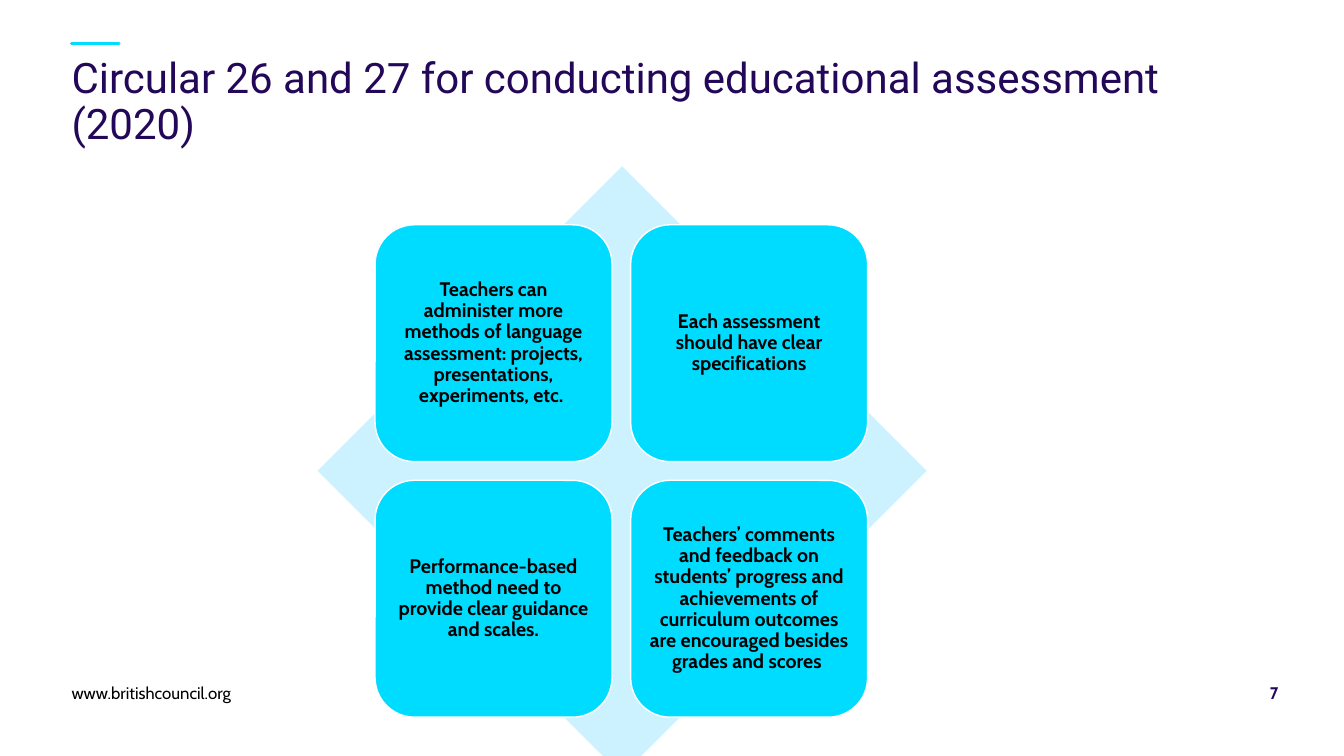
from dataclasses import dataclass

from lxml.etree import SubElement
from pptx import Presentation
from pptx.dml.color import RGBColor
from pptx.enum.shapes import MSO_CONNECTOR, MSO_SHAPE
from pptx.enum.text import MSO_ANCHOR, PP_ALIGN
from pptx.oxml.ns import qn
from pptx.shapes.autoshape import Shape
from pptx.slide import Slide
from pptx.util import Inches, Pt

CYAN, PALE_CYAN, INDIGO = "00DCFF", "CCF2FF", "230859"
WHITE, BLACK = "FFFFFF", "000000"
MARGIN = 0.71
DIAMOND_LEFT, DIAMOND_TOP, DIAMOND_SIZE = 3.15, 1.65, 6.04
CARD_LEFT, CARD_TOP, CARD_SIZE, CARD_STEP = 3.72, 2.23, 2.35, 2.535

CARD_TEXTS = [
    "Teachers can administer more methods of language assessment: "
    "projects, presentations, experiments, etc. ",
    "Each assessment should have clear specifications",
    "Performance-based method need to provide clear guidance and scales.",
    "Teachers’ comments and feedback on students’ progress and achievements "
    "of curriculum outcomes are encouraged besides grades and scores ",
]


@dataclass
class TextStyle:
    size: float
    font: str = "Cabin"
    color: str = BLACK
    bold: bool = False
    align: PP_ALIGN = PP_ALIGN.LEFT
    anchor: MSO_ANCHOR = MSO_ANCHOR.BOTTOM
    line_spacing: float | Pt | None = None
    inset: float = 0


@dataclass
class Label:
    text: str
    left: float
    top: float
    width: float
    height: float
    style: TextStyle


CARD_STYLE = TextStyle(14, bold=True, align=PP_ALIGN.CENTER,
                       anchor=MSO_ANCHOR.MIDDLE, line_spacing=0.9, inset=0.06)
TITLE_STYLE = TextStyle(30, font="Roboto", color=INDIGO,
                        anchor=MSO_ANCHOR.TOP, line_spacing=Pt(33))
NUMBER_STYLE = TextStyle(12, color=INDIGO, bold=True, align=PP_ALIGN.RIGHT)

LABELS = [
    Label("Circular 26 and 27 for conducting educational assessment (2020)",
          MARGIN, 0.55, 11.97, 0.87, TITLE_STYLE),
    Label("www.britishcouncil.org", MARGIN, 6.77, 11.42, 0.2, TextStyle(12)),
    Label("7", 12.13, 6.77, 0.55, 0.2, NUMBER_STYLE),
]


def rgb(color: str) -> RGBColor:
    return RGBColor.from_string(color)


def write(shape: Shape, text: str, style: TextStyle) -> None:
    frame = shape.text_frame
    frame.text = text
    frame.word_wrap = True
    frame.vertical_anchor = style.anchor
    frame.margin_left = frame.margin_right = Inches(style.inset)
    frame.margin_top = frame.margin_bottom = Inches(style.inset)
    para = frame.paragraphs[0]
    para.alignment = style.align
    para.line_spacing = style.line_spacing
    font = para.runs[0].font
    font.name, font.size, font.bold = style.font, Pt(style.size), style.bold
    font.color.rgb = rgb(style.color)


def add_square_shape(page: Slide, kind: MSO_SHAPE, left: float, top: float,
                     size: float, fill: str) -> Shape:
    shape = page.shapes.add_shape(kind, Inches(left), Inches(top),
                                  Inches(size), Inches(size))
    shape.shadow.inherit = False
    shape.fill.solid()
    shape.fill.fore_color.rgb = rgb(fill)
    shape.line.fill.background()
    return shape


def add_card(page: Slide, index: int, text: str) -> None:
    row, column = divmod(index, 2)
    card = add_square_shape(page, MSO_SHAPE.ROUNDED_RECTANGLE,
                            CARD_LEFT + column * CARD_STEP,
                            CARD_TOP + row * CARD_STEP, CARD_SIZE, CYAN)
    card.line.color.rgb = rgb(WHITE)
    card.line.width = Pt(1)
    write(card, text, CARD_STYLE)


def add_accent_line(page: Slide) -> None:
    accent = page.shapes.add_connector(MSO_CONNECTOR.STRAIGHT, Inches(MARGIN),
                                       Inches(0.43), Inches(1.18), Inches(0.43))
    accent.line.color.rgb = rgb(CYAN)
    accent.line.width = Pt(2.4)
    properties = accent.element.spPr
    properties.find(qn("a:ln")).set("cap", "rnd")
    SubElement(properties, qn("a:effectLst"))


def add_label(page: Slide, label: Label) -> None:
    box = page.shapes.add_textbox(Inches(label.left), Inches(label.top),
                                  Inches(label.width), Inches(label.height))
    write(box, label.text, label.style)


def main() -> None:
    deck = Presentation()
    deck.slide_width, deck.slide_height = Inches(13.33), Inches(7.5)
    page = deck.slides.add_slide(deck.slide_layouts[6])
    add_accent_line(page)
    add_square_shape(page, MSO_SHAPE.DIAMOND, DIAMOND_LEFT, DIAMOND_TOP,
                     DIAMOND_SIZE, PALE_CYAN)
    for index, text in enumerate(CARD_TEXTS):
        add_card(page, index, text)
    for label in LABELS:
        add_label(page, label)
    deck.save("out.pptx")


if __name__ == "__main__":
    main()
